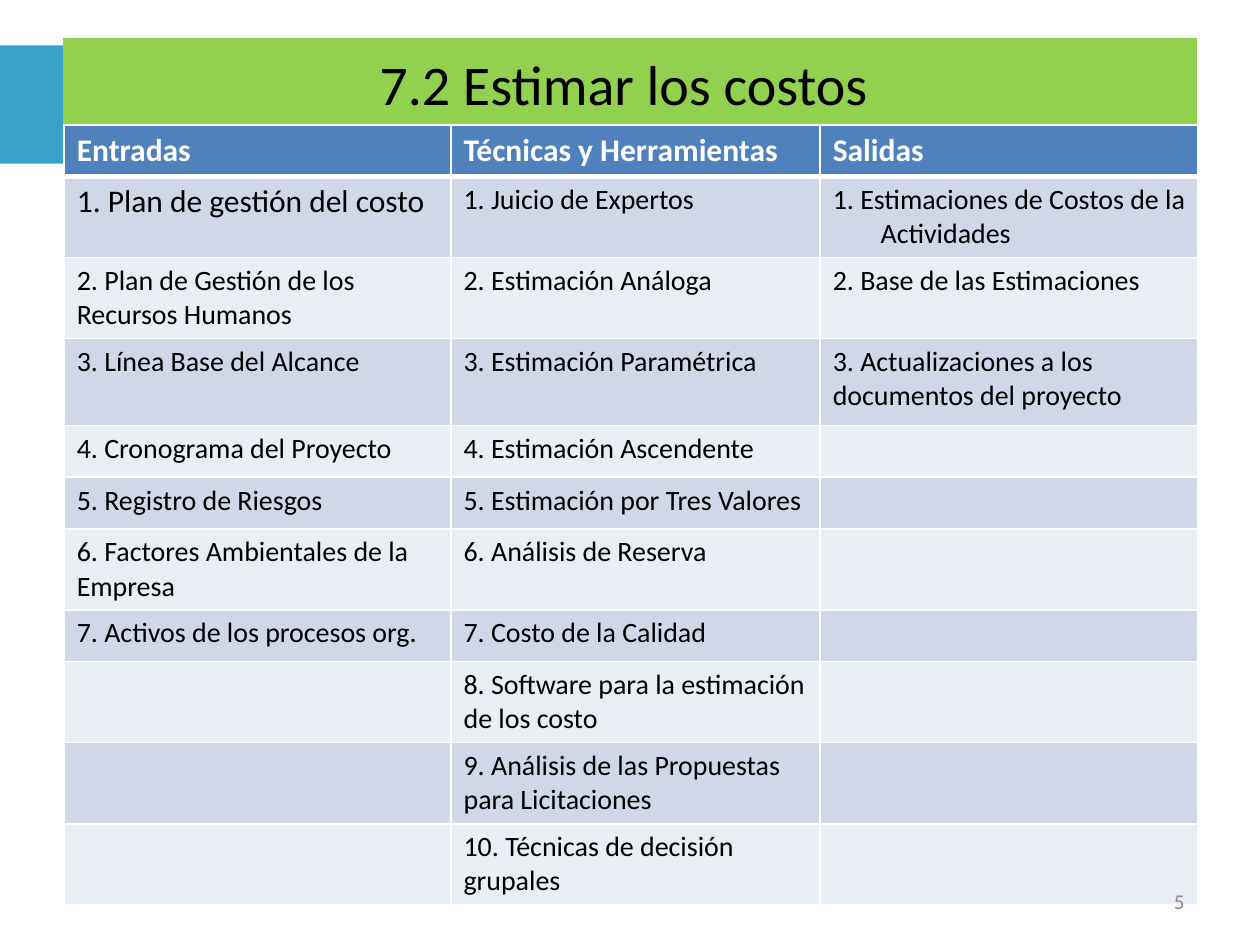
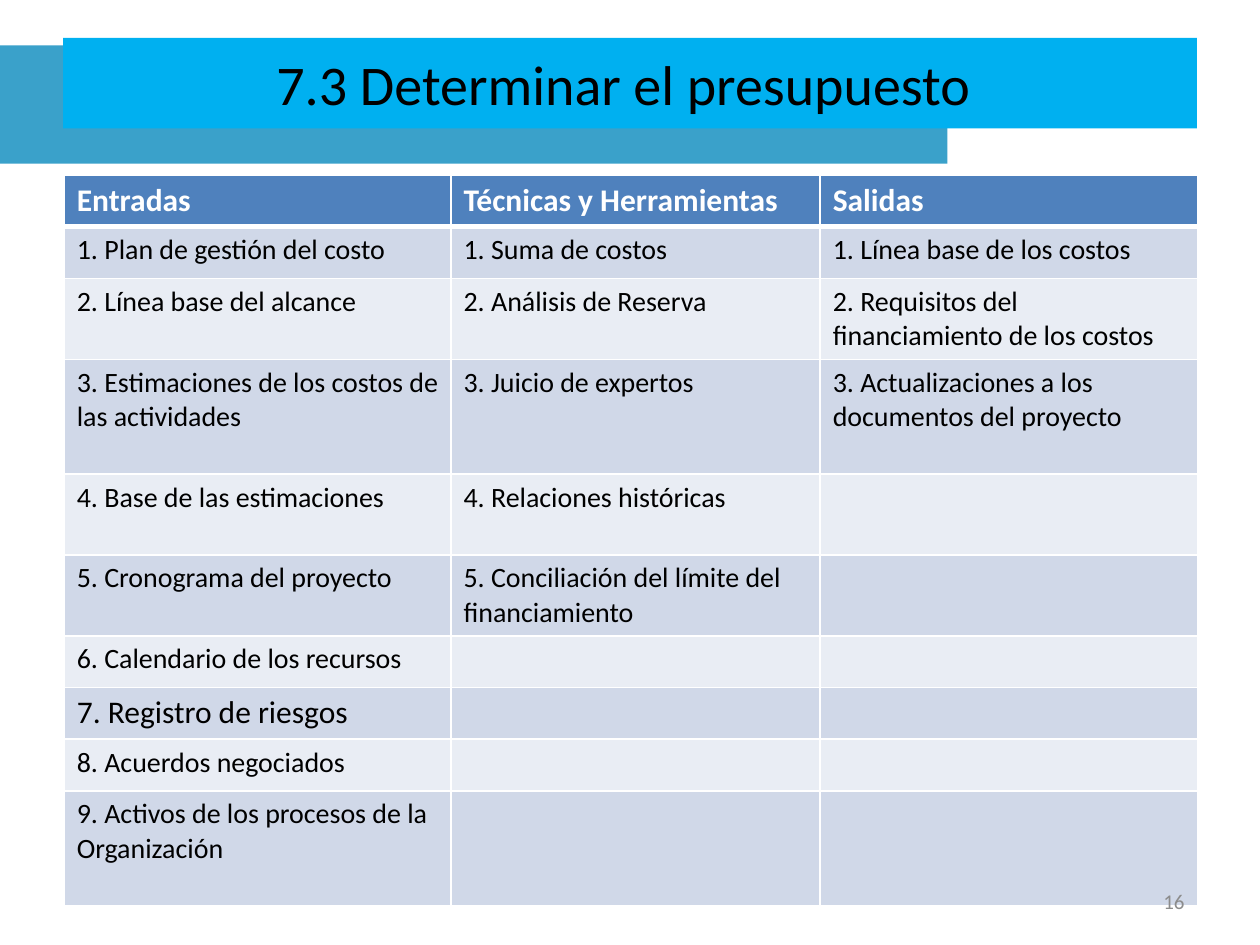
from itertools import zip_longest

from lxml import etree
from pptx import Presentation
from pptx import util as u
from pptx.dml.color import RGBColor
from pptx.enum import shapes, text
from pptx.oxml import ns

WIDTH, HEIGHT = 10, 7.5
FONT = "Calibri"
BLACK, WHITE, GREY = "000000", "FFFFFF", "8C8C8C"
BAND, HEADER = "3AA1CA", "4F81BD"
STRIPES = ("D0D8E8", "E9EDF4")

BAND_BOX = (0, 0.36, 7.52, 0.94)
TITLE_BOX = (0.5, 0.3, 9, 0.72)
NUMBER_BOX = (7.17, 6.95, 2.33, 0.4)
TABLE_LEFT = 0.51
COLUMNS = (3.07, 2.93, 3)
HEADINGS = ("Entradas", "Técnicas y Herramientas", "Salidas")
ONE, TWO, SCOPE, THREE = 0.41, 0.64, 0.69, 0.91
HANGING = 0.38

PROCESSES = [
    dict(
        title="7.2 Estimar los costos ", color="92D050", number="5", top=0.99,
        rows=(ONE, TWO, TWO, SCOPE, ONE, ONE, TWO, ONE, TWO, TWO, TWO),
        large="1. Plan de gestión del costo",
        inputs=(
            "1. Plan de gestión del costo",
            "2. Plan de Gestión de los Recursos Humanos",
            "3. Línea Base del Alcance",
            "4. Cronograma del Proyecto",
            "5. Registro de Riesgos",
            "6. Factores Ambientales de la Empresa",
            "7. Activos de los procesos org.",
        ),
        tools=(
            "1. Juicio de Expertos",
            "2. Estimación Análoga",
            "3. Estimación Paramétrica",
            "4. Estimación Ascendente",
            "5. Estimación por Tres Valores",
            "6. Análisis de Reserva",
            "7. Costo de la Calidad",
            "8. Software para la estimación de los costo",
            "9. Análisis de las Propuestas para Licitaciones",
            "10. Técnicas de decisión grupales",
        ),
        outputs=(
            "1. Estimaciones de Costos de la Actividades",
            "2. Base de las Estimaciones",
            "3. Actualizaciones a los documentos del proyecto",
        ),
    ),
    dict(
        title="7.3 Determinar el presupuesto ", color="00B0F0", number="16", top=1.39,
        rows=(ONE, ONE, TWO, THREE, TWO, TWO, ONE, ONE, ONE, THREE),
        large="7. Registro de riesgos",
        inputs=(
            "1. Plan de gestión del costo",
            "2. Línea base del alcance",
            "3. Estimaciones de los costos de las actividades",
            "4. Base de las estimaciones",
            "5. Cronograma del proyecto",
            "6. Calendario de los recursos",
            "7. Registro de riesgos",
            "8. Acuerdos negociados",
            "9. Activos de los procesos de la Organización",
        ),
        tools=(
            "1. Suma de costos",
            "2. Análisis de Reserva",
            "3. Juicio de expertos",
            "4. Relaciones históricas",
            "5. Conciliación del límite del financiamiento",
        ),
        outputs=(
            "1. Línea base de los costos",
            "2. Requisitos del financiamiento de los costos",
            "3. Actualizaciones a los documentos del proyecto",
        ),
    ),
]


def rgb(value):
    return RGBColor.from_string(value)


def inches(box):
    return [u.Inches(length) for length in box]


def paint(part, color):
    part.fill.solid()
    part.fill.fore_color.rgb = rgb(color)


def write(paragraph, words, size, color, bold=False, align=None):
    paragraph.alignment = align
    run = paragraph.add_run()
    run.text = words
    run.font.name = FONT
    run.font.size = u.Pt(size)
    run.font.bold = bold
    run.font.color.rgb = rgb(color)


def add_master_band(prs, slide, box):
    band = slide.shapes.add_shape(shapes.MSO_SHAPE.RECTANGLE, *inches(box))
    paint(band, BAND)
    band.line.fill.background()
    band.shadow.inherit = False
    band.element.nvSpPr.cNvPr.set("id", "20")
    prs.slide_master.shapes.element.insert(2, band.element)


def add_title(slide, box, words, color):
    title = slide.shapes.title
    title.left, title.top, title.width, title.height = inches(box)
    paint(title, color)
    title.text_frame.vertical_anchor = text.MSO_ANCHOR.MIDDLE
    write(title.text_frame.paragraphs[0], words, 32, BLACK, align=text.PP_ALIGN.CENTER)


def add_number(slide, box, number):
    frame = slide.shapes.add_textbox(*inches(box)).text_frame
    frame.word_wrap = True
    frame.vertical_anchor = text.MSO_ANCHOR.MIDDLE
    write(frame.paragraphs[0], number, 12, GREY, align=text.PP_ALIGN.RIGHT)


def add_borders(cell, **widths):
    properties = cell._tc.get_or_add_tcPr()
    for place, side in enumerate("LRTB"):
        line = etree.Element(ns.qn(f"a:ln{side}"), w=str(u.Pt(widths.get(side, 1))))
        fill = etree.SubElement(line, ns.qn("a:solidFill"))
        etree.SubElement(fill, ns.qn("a:srgbClr"), val=WHITE)
        properties.insert(place, line)


def add_process_table(slide, left, top, process):
    heights = process["rows"]
    entries = list(zip_longest(process["inputs"], process["tools"], process["outputs"]))
    box = inches((left, top, sum(COLUMNS), sum(heights)))
    table = slide.shapes.add_table(len(heights), len(COLUMNS), *box).table
    for column, width in zip(table.columns, COLUMNS):
        column.width = u.Inches(width)
    for row, height in zip(table.rows, heights):
        row.height = u.Inches(height)

    for c, heading in enumerate(HEADINGS):
        cell = table.cell(0, c)
        paint(cell, HEADER)
        add_borders(cell, B=3)
        write(cell.text_frame.paragraphs[0], heading, 18, WHITE, bold=True)

    for r, row in enumerate(entries, 1):
        for c, entry in enumerate(row):
            cell = table.cell(r, c)
            paint(cell, STRIPES[(r - 1) % 2])
            add_borders(cell, T=3 if r == 1 else 1)
            if entry:
                size = 18 if entry == process["large"] else 16
                write(cell.text_frame.paragraphs[0], entry, size, BLACK)

    first_output = table.cell(1, 2).text_frame.paragraphs[0]._p.get_or_add_pPr()
    first_output.set("marL", str(u.Inches(HANGING)))
    first_output.set("indent", str(-u.Inches(HANGING)))


def add_process_slide(slide, process):
    add_title(slide, TITLE_BOX, process["title"], process["color"])
    add_process_table(slide, TABLE_LEFT, process["top"], process)
    add_number(slide, NUMBER_BOX, process["number"])


def main():
    prs = Presentation()
    prs.slide_width, prs.slide_height = inches((WIDTH, HEIGHT))
    title_only = prs.slide_layouts[5]
    for process in PROCESSES:
        add_process_slide(prs.slides.add_slide(title_only), process)
    add_master_band(prs, prs.slides[0], BAND_BOX)
    prs.save("out.pptx")


if __name__ == "__main__":
    main()
